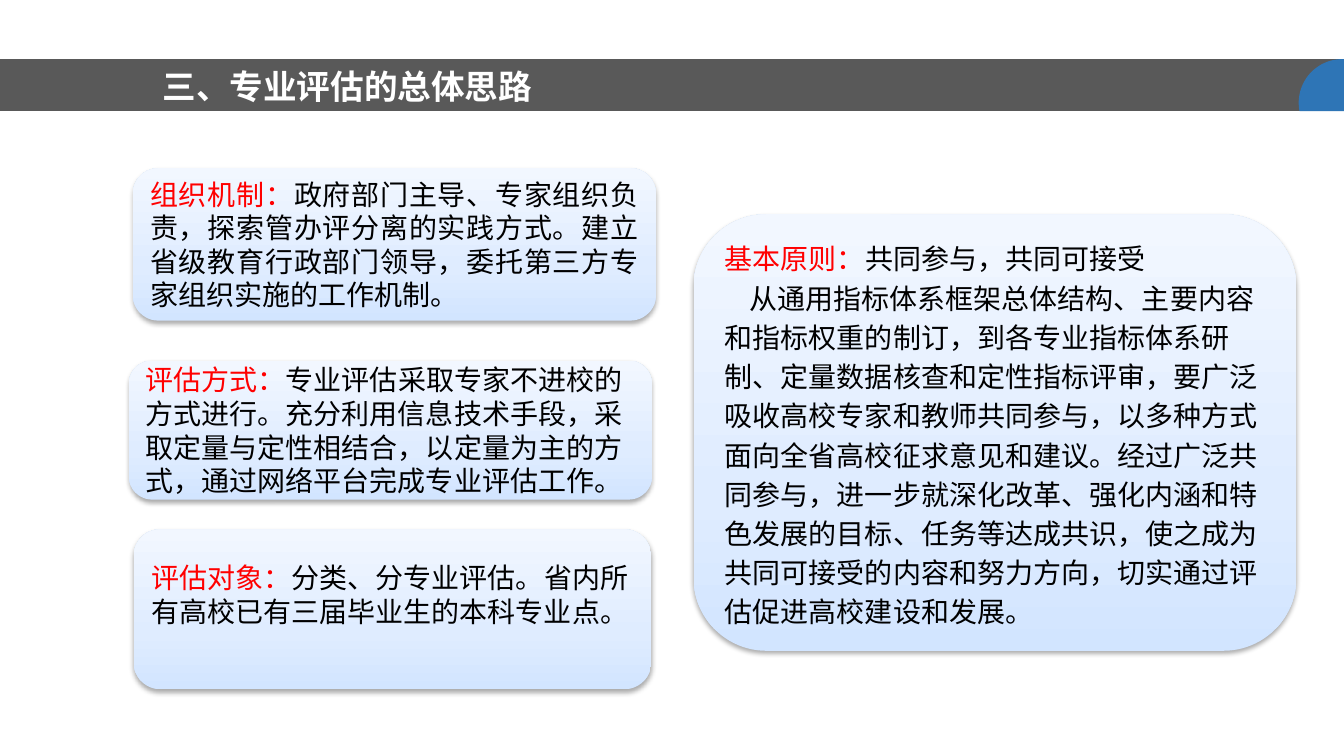
from copy import deepcopy
from math import cos, radians, sin

from lxml import etree
from pptx import Presentation
from pptx.dml.color import RGBColor
from pptx.enum.shapes import MSO_SHAPE
from pptx.enum.text import MSO_ANCHOR, MSO_AUTO_SIZE, PP_ALIGN
from pptx.oxml import parse_xml
from pptx.oxml.ns import nsdecls, qn
from pptx.util import Cm, Pt

BAR_SHAPE, CARD_SHAPE = MSO_SHAPE.FLOWCHART_PROCESS, MSO_SHAPE.ROUNDED_RECTANGLE
LEFT, JUSTIFY = PP_ALIGN.LEFT, PP_ALIGN.JUSTIFY
MIDDLE = MSO_ANCHOR.MIDDLE
NO_AUTOFIT = MSO_AUTO_SIZE.NONE

WHITE = RGBColor(0xFF, 0xFF, 0xFF)
BLACK = RGBColor(0, 0, 0)
RED = RGBColor(0xFF, 0, 0)
GRAY = RGBColor(0x59, 0x59, 0x59)
BLUE = RGBColor(0x2E, 0x75, 0xB6)
CARD_GRADIENT = [
    (0, RGBColor(0xD2, 0xE5, 0xFF)),
    (0.35, RGBColor(0xDF, 0xEC, 0xFF)),
    (1, RGBColor(0xF2, 0xF7, 0xFF)),
]
CJK_FONT = "Noto Sans CJK SC"

TITLE = "三、专业评估的总体思路"
# place is left, top, width, height in cm; each paragraph is a list of (text, colour)
CARDS = [
    {
        "place": (3.35, 4.24, 13.18, 3.84), "align": JUSTIFY, "spacing": 24, "bottom": 0.13,
        "paragraphs": [[
            ("组织机制：", RED),
            ("政府部门主导、专家组织负责，探索管办评分离的实践方式。建立省级教育行政部门领导，"
             "委托第三方专家组织实施的工作机制。", BLACK),
        ]],
    },
    {
        "place": (3.25, 9.09, 13.18, 3.5), "align": LEFT, "spacing": 24, "bottom": 0.13,
        "paragraphs": [[
            ("评估方式：", RED),
            ("专业评估采取专家不进校的方式进行。充分利用信息技术手段，采取定量与定性相结合，"
             "以定量为主的方式，通过网络平台完成专业评估工作。", BLACK),
        ]],
    },
    {
        "place": (3.37, 13.34, 13.04, 4.03), "align": LEFT, "spacing": 24, "bottom": 0.89,
        "paragraphs": [[
            ("评估对象：", RED),
            ("分类、分专业评估。省内所有高校已有三届毕业生的本科专业点。", BLACK),
        ]],
    },
    {
        "place": (17.48, 5.4, 15.19, 11), "align": LEFT, "spacing": 28, "bottom": 0.13,
        "paragraphs": [
            [("基本原则：", RED), ("共同参与，共同可接受", BLACK)],
            [("从通用指标体系框架总体结构、主要内容和指标权重的制订，到各专业指标体系研制、"
              "定量数据核查和定性指标评审，要广泛吸收高校专家和教师共同参与，以多种方式面向"
              "全省高校征求意见和建议。经过广泛共同参与，进一步就深化改革、强化内涵和特色发展"
              "的目标、任务等达成共识，使之成为共同可接受的内容和努力方向，切实通过评估促进"
              "高校建设和发展。", BLACK)],
        ],
    },
]
FIRST_LINE_INDENT = Cm(0.62)


def set_all(target, formats):
    for name, value in formats.items():
        setattr(target, name, value)


def add_run(paragraph, text, color, size, latin=CJK_FONT, bold=False):
    run = paragraph.add_run()
    run.text = text
    set_all(run.font, {"name": latin, "size": Pt(size), "bold": bold})
    run.font.color.rgb = color
    east_asian = etree.SubElement(run.font._element, qn("a:ea"))
    east_asian.set("typeface", CJK_FONT)


def paint_flat(shape, color):
    shape.fill.solid()
    shape.fill.fore_color.rgb = color
    shape.line.fill.background()
    shape.shadow.inherit = False


def paint_card(card):
    card.line.fill.background()
    card.fill.gradient()
    card.fill.gradient_angle = 90
    first_stop = card.fill._xPr.find(".//" + qn("a:gs"))
    first_stop.addnext(deepcopy(first_stop))
    for stop, (position, color) in zip(card.fill.gradient_stops, CARD_GRADIENT):
        stop.position = position
        stop.color.rgb = color
    card.shadow.inherit = False
    card._element.spPr.find(qn("a:effectLst")).append(parse_xml(
        f'<a:outerShdw {nsdecls("a")} blurRad="{Pt(3.5)}" dist="{Pt(2.2)}" dir="5400000" '
        'rotWithShape="0"><a:srgbClr val="000000"><a:alpha val="32000"/></a:srgbClr>'
        '</a:outerShdw>'))


def add_card(shapes, content):
    card = shapes.add_shape(CARD_SHAPE, *map(Cm, content["place"]))
    paint_card(card)
    frame = card.text_frame
    set_all(frame, {"word_wrap": True, "vertical_anchor": MIDDLE,
                    "margin_bottom": Cm(content["bottom"])})
    for index, parts in enumerate(content["paragraphs"]):
        paragraph = frame.add_paragraph() if index else frame.paragraphs[0]
        set_all(paragraph, {"alignment": content["align"],
                            "line_spacing": Pt(content["spacing"])})
        properties = paragraph._p.get_or_add_pPr()
        properties.set("hangingPunct", "0")  # punctuation stays inside the margin
        if index:
            properties.set("indent", str(FIRST_LINE_INDENT))
        for text, color in parts:
            add_run(paragraph, text, color, 20)


def add_header(prs, slide):
    shapes = slide.shapes
    bar = shapes.add_shape(BAR_SHAPE, 0, Cm(1.49), prs.slide_width, Cm(1.32))
    paint_flat(bar, GRAY)

    center_x, center_y, radius, bottom = 33.83, 2.59, 1.1, 2.8
    arc = [(Cm(center_x - radius * cos(radians(angle))),
            Cm(center_y - radius * sin(radians(angle)))) for angle in range(-11, 91)]
    right = prs.slide_width
    outline = shapes.build_freeform(*arc[0])
    outline.add_line_segments(arc[1:] + [(right, arc[-1][1]), (right, Cm(bottom))])
    paint_flat(outline.convert_to_shape(), BLUE)

    title = shapes.title
    set_all(title, {"left": Cm(3.84), "top": Cm(1.54), "width": Cm(13.97), "height": Cm(1.27)})
    set_all(title.text_frame, {"word_wrap": True, "auto_size": NO_AUTOFIT,
                               "vertical_anchor": MIDDLE})
    heading = title.text_frame.paragraphs[0]
    heading.alignment = LEFT
    add_run(heading, TITLE, WHITE, 24, latin="Arial", bold=True)
    shapes._spTree.append(title._element)  # lifts the title above the bar


def main():
    prs = Presentation()
    set_all(prs, {"slide_width": Cm(33.87), "slide_height": Cm(19.05)})
    slide = prs.slides.add_slide(prs.slide_layouts[5])
    add_header(prs, slide)
    for content in CARDS:
        add_card(slide.shapes, content)
    prs.save("out.pptx")


if __name__ == "__main__":
    main()
